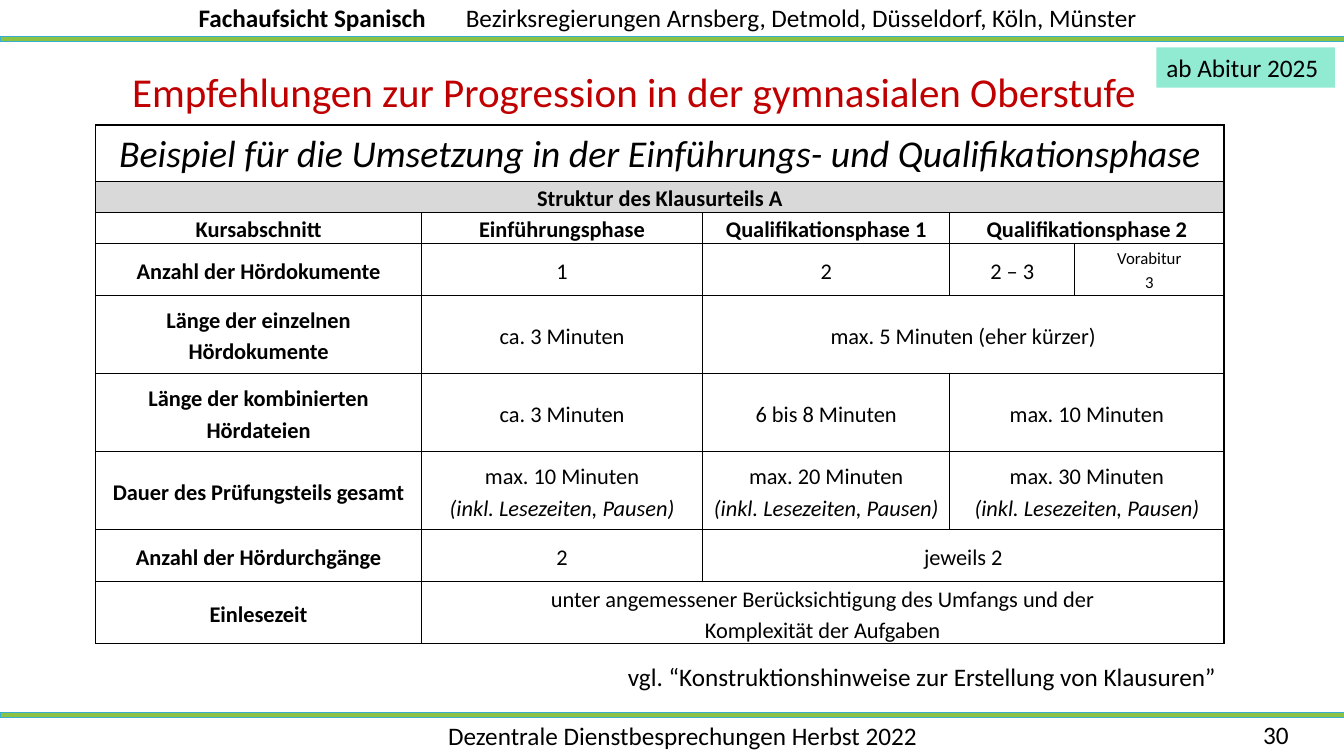
"""Builds the slide on listening exam progression in the upper secondary level."""
from lxml import etree
from pptx import Presentation
from pptx.dml.color import RGBColor
from pptx.enum.shapes import MSO_SHAPE
from pptx.enum.text import MSO_ANCHOR, PP_ALIGN
from pptx.oxml.ns import qn
from pptx.util import Inches, Pt

RECTANGLE = MSO_SHAPE.RECTANGLE
LEFT, CENTER = PP_ALIGN.LEFT, PP_ALIGN.CENTER
TOP, MIDDLE = MSO_ANCHOR.TOP, MSO_ANCHOR.MIDDLE
BLACK, RED, GREEN, BLUE, MINT, GRAY = "000000", "C00000", "8BC145", "36AFCE", "91EAD2", "D9D9D9"
SLIDE_WIDTH, SLIDE_HEIGHT = 13.33, 7.5
TITLE_ONLY = 5

COLUMN_WIDTHS = [3.23, 2.79, 2.45, 1.24, 1.48]
ROW_HEIGHTS = [0.56, 0.26, 0.26, 0.52, 0.77, 0.78, 0.77, 0.52, 0.52]
HEADING_ROWS = 3
READING_TIME = "(inkl. Lesezeiten, Pausen)"
TABLE_ROWS = [
    [("Beispiel für die Umsetzung in der Einführungs- und Qualifikationsphase", 5)],
    [("Struktur des Klausurteils A", 5)],
    [("Kursabschnitt", 1), ("Einführungsphase", 1), ("Qualifikationsphase 1", 1), ("Qualifikationsphase 2", 2)],
    [("Anzahl der Hördokumente", 1), ("1", 1), ("2", 1), ("2 – 3", 1), ("Vorabitur\n3", 1)],
    [("Länge der einzelnen Hördokumente", 1), ("ca. 3 Minuten", 1), ("max. 5 Minuten (eher kürzer)", 3)],
    [("Länge der kombinierten Hördateien", 1), ("ca. 3 Minuten", 1), ("6 bis 8 Minuten", 1), ("max. 10 Minuten", 2)],
    [("Dauer des Prüfungsteils gesamt", 1)]
    + [(f"max. {minutes} Minuten\n{READING_TIME}", span) for minutes, span in ((10, 1), (20, 1), (30, 2))],
    [("Anzahl der Hördurchgänge", 1), ("2", 1), ("jeweils 2", 3)],
    [("Einlesezeit", 1),
     ("unter angemessener Berücksichtigung des Umfangs und der\nKomplexität der Aufgaben", 4)],
]


def color(value):
    """Turn a hex string into a colour."""
    return RGBColor.from_string(value)


def apply(target, formats):
    """Set every attribute named in the formats."""
    for name, value in formats.items():
        setattr(target, name, value)


class SlideBuilder:
    """Holds the text style and the current slide."""

    def __init__(self, slide, font="Calibri", size=18):
        """Keep the slide and the default style."""
        self.slide, self.font, self.size = slide, font, size

    def fill_text(self, frame, paragraphs, alignment=LEFT, spacing=None, text_color=BLACK):
        """Fill a frame with paragraphs, each a list of text and format pairs."""
        for index, runs in enumerate(paragraphs):
            paragraph = frame.paragraphs[0] if index == 0 else frame.add_paragraph()
            apply(paragraph, {"alignment": alignment, "line_spacing": spacing})
            for text, formats in runs:
                run = paragraph.add_run()
                run.text = text
                apply(run.font, {"name": self.font, "size": Pt(self.size), **formats})
                run.font.color.rgb = color(text_color)

    def title(self, text, left, top, width, height, size):
        """Place and format the title placeholder."""
        title = self.slide.shapes.title
        apply(title, {"left": Inches(left), "top": Inches(top), "width": Inches(width), "height": Inches(height)})
        apply(title.text_frame, {"vertical_anchor": MIDDLE, "word_wrap": True})
        self.fill_text(title.text_frame, [[(text, {"size": Pt(size)})]], text_color=RED)

    def text(self, runs, left, top, width, alignment=LEFT):
        """Add a one-line text box and return it."""
        box = self.slide.shapes.add_textbox(Inches(left), Inches(top), Inches(width), Inches(0.4))
        box.text_frame.word_wrap = True
        self.fill_text(box.text_frame, [runs], alignment)
        return box

    def rectangle(self, left, top, width, height, fill, line=None, text=None):
        """Add a filled rectangle, with a line and text if given."""
        shape = self.slide.shapes.add_shape(RECTANGLE, Inches(left), Inches(top), Inches(width), Inches(height))
        shape.shadow.inherit = False
        shape.fill.solid()
        shape.fill.fore_color.rgb = color(fill)
        if line:
            shape.line.color.rgb = color(line)
            shape.line.width = Pt(0.5)
        else:
            shape.line.fill.background()
        if text:
            self.fill_text(shape.text_frame, [[(text, {})]])

    def border(self, cell):
        """Draw a thin black line on all sides of a cell."""
        properties = cell._tc.get_or_add_tcPr()
        for side in ("a:lnL", "a:lnR", "a:lnT", "a:lnB"):
            line = etree.SubElement(properties, qn(side), w=str(Pt(1)))
            fill = etree.SubElement(line, qn("a:solidFill"))
            etree.SubElement(fill, qn("a:srgbClr"), val=BLACK)

    def cell(self, cell, text, row, column):
        """Fill one table cell in the style of its row and column."""
        size = 27 if row == 0 else 12 if text.startswith("Vorabitur") else 16
        bold = row in (1, 2) or (row > 0 and column == 0)
        apply(cell, {"margin_left": Inches(0.07), "margin_right": Inches(0.07), "margin_top": 0,
                     "margin_bottom": 0, "vertical_anchor": TOP if row < HEADING_ROWS else MIDDLE})
        paragraphs = [
            [(line, {"size": Pt(size), "bold": bold, "italic": row == 0 or line == READING_TIME})]
            for line in text.split("\n")
        ]
        self.fill_text(cell.text_frame, paragraphs, CENTER, 1.15)

    def table(self, rows, left, top):
        """Add the bordered table with its merged cells."""
        frame = self.slide.shapes.add_table(
            len(ROW_HEIGHTS), len(COLUMN_WIDTHS), Inches(left), Inches(top),
            Inches(sum(COLUMN_WIDTHS)), Inches(sum(ROW_HEIGHTS)))
        table = frame.table
        apply(table, {"first_row": False, "horz_banding": False})
        for column, width in zip(table.columns, COLUMN_WIDTHS):
            column.width = Inches(width)
        for row, height in zip(table.rows, ROW_HEIGHTS):
            row.height = Inches(height)
        for row, entries in enumerate(rows):
            for cell in table.rows[row].cells:
                self.border(cell)
                if row == 1:
                    cell.fill.solid()
                    cell.fill.fore_color.rgb = color(GRAY)
                else:
                    cell.fill.background()
            column = 0
            for text, span in entries:
                cell = table.cell(row, column)
                if span > 1:
                    cell.merge(table.cell(row, column + span - 1))
                self.cell(cell, text, row, column)
                column += span

    def header(self, name, districts):
        """Add the header line, with a tab stop between its two parts."""
        box = self.text([(f"{name}\t", {"bold": True}), (districts, {})], 0, -0.03, SLIDE_WIDTH)
        box.text_frame.margin_left = Inches(1.97)
        properties = box.text_frame.paragraphs[0]._p.get_or_add_pPr()
        tabs = etree.SubElement(properties, qn("a:tabLst"))
        etree.SubElement(tabs, qn("a:tab"), pos=str(Inches(2.65)), algn="l")


def main():
    """Build and save the presentation."""
    presentation = Presentation()
    presentation.slide_width = Inches(SLIDE_WIDTH)
    presentation.slide_height = Inches(SLIDE_HEIGHT)
    builder = SlideBuilder(presentation.slides.add_slide(presentation.slide_layouts[TITLE_ONLY]))
    for top in (0.36, 7.07):
        builder.rectangle(0, top, SLIDE_WIDTH, 0.05, GREEN, BLUE)
    builder.header("Fachaufsicht Spanisch", "Bezirksregierungen Arnsberg, Detmold, Düsseldorf, Köln, Münster")
    builder.text([("Dezentrale Dienstbesprechungen Herbst 2022", {})], 3.38, 7.1, 6.78, CENTER)
    builder.title("Empfehlungen zur Progression in der gymnasialen Oberstufe", 1.21, 0.57, 12.1, 0.67, 29.3)
    builder.table(TABLE_ROWS, 0.95, 1.24)
    builder.text([("30", {})], 12.43, 7.09, 0.9)
    builder.rectangle(11.47, 0.47, 1.77, 0.4, MINT, text="ab Abitur 2025")
    builder.text([("vgl. “Konstruktionshinweise zur Erstellung von Klausuren”", {})], 6.13, 6.51, 6.43)
    presentation.save("out.pptx")


if __name__ == "__main__":
    main()
